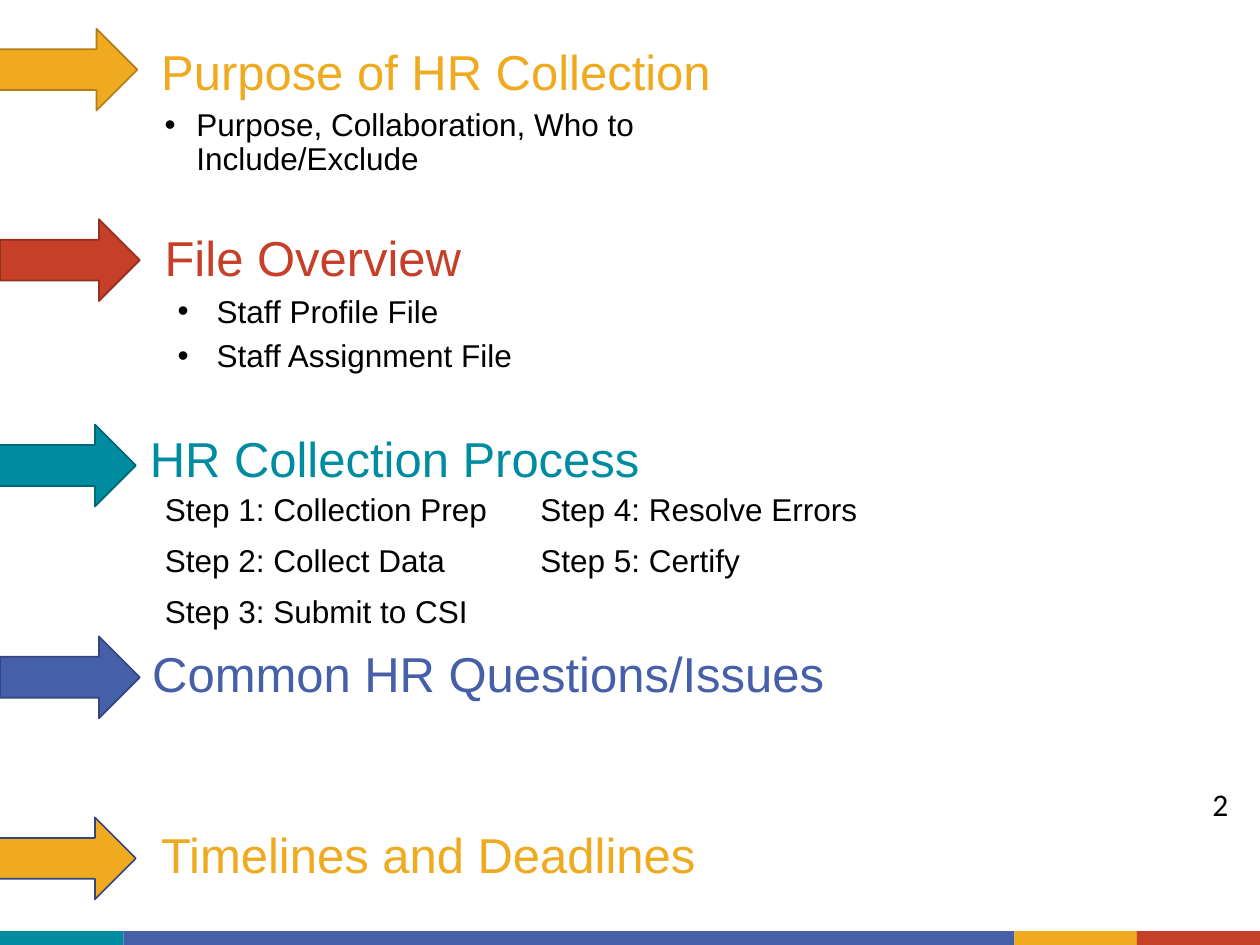
from pptx import Presentation
from pptx.dml.color import RGBColor
from pptx.enum.shapes import MSO_SHAPE as Shape
from pptx.oxml.ns import qn
from pptx.util import Cm, Pt
from lxml.etree import SubElement

GOLD = RGBColor(0xEF, 0xAA, 0x1F)
RED = RGBColor(0xC6, 0x3F, 0x28)
TEAL = RGBColor(0x00, 0x8C, 0xA0)
BLUE = RGBColor(0x45, 0x5F, 0xA9)
DARK_GOLD = RGBColor(0xB1, 0x7E, 0x17)
DARK_RED = RGBColor(0x92, 0x2F, 0x1E)
DARK_TEAL = RGBColor(0x00, 0x68, 0x76)
DARK_BLUE = RGBColor(0x33, 0x46, 0x7D)
BLACK = RGBColor(0, 0, 0)


def write(frame, text, size=18, color=BLACK, font="Arial", spacing=None,
          before=0, after=0, bullet=None, level=0):
    """Fill a text frame, one paragraph a line; bullet is (margin, hang) in cm."""
    for i, line in enumerate(text.split("\n")):
        para = frame.paragraphs[0] if i == 0 else frame.add_paragraph()
        para.level = level
        if bullet:
            margin, hang = bullet
            props = para._p.get_or_add_pPr()
            props.set("marL", str(Cm(margin)))
            props.set("indent", str(-Cm(hang)))
            SubElement(props, qn("a:buFont")).set("typeface", "Arial")
            SubElement(props, qn("a:buChar")).set("char", "•")
        if spacing:
            para.line_spacing = spacing
        para.space_before = Pt(before if i else 0)
        para.space_after = Pt(after)
        run = para.add_run()
        run.text = line
        run.font.size = Pt(size)
        run.font.name = font
        run.font.color.rgb = color


class Page:
    def __init__(self, slide):
        self.slide = slide

    def shape(self, kind, x, y, w, h, fill, line=None):
        item = self.slide.shapes.add_shape(kind, Cm(x), Cm(y), Cm(w), Cm(h))
        item.shadow.inherit = False
        item.fill.solid()
        item.fill.fore_color.rgb = fill
        if line is None:
            item.line.fill.background()
        else:
            item.line.color.rgb = line
            item.line.width = Pt(1)

    def arrow(self, x, y, fill, line):
        self.shape(Shape.RIGHT_ARROW, x, y, 2.82, 1.65, fill, line)

    def text(self, x, y, w, h, text, inset=None, **style):
        box = self.slide.shapes.add_textbox(Cm(x), Cm(y), Cm(w), Cm(h))
        frame = box.text_frame
        frame.word_wrap = True
        if inset is not None:
            frame.margin_left = frame.margin_right = Cm(inset)
            frame.margin_top = frame.margin_bottom = Cm(inset)
        write(frame, text, **style)

    def title(self, x, y, w, h, text, color):
        self.text(x, y, w, h, text, size=28, color=color, spacing=0.9)

    def table(self, x, y, widths, height, rows):
        grid = self.slide.shapes.add_table(
            len(rows), len(widths), Cm(x), Cm(y),
            Cm(sum(widths)), Cm(height * len(rows))).table
        grid.first_row = grid.horz_banding = False
        for col, width in zip(grid.columns, widths):
            col.width = Cm(width)
        for r, row in enumerate(rows):
            for c, text in enumerate(row):
                cell = grid.cell(r, c)
                cell.fill.background()
                write(cell.text_frame, text)


def main():
    deck = Presentation()
    deck.slide_width, deck.slide_height = Cm(25.4), Cm(19.05)
    page = Page(deck.slides.add_slide(deck.slide_layouts[6]))

    left = 0
    for width, color in [(2.49, TEAL), (17.96, BLUE), (2.47, GOLD), (2.48, RED)]:
        page.shape(Shape.RECTANGLE, left, 18.77, width, 0.28, color)
        left += width

    for x, y, fill, line in [
        (-0.05, 0.58, GOLD, DARK_GOLD),
        (0, 4.42, RED, DARK_RED),
        (-0.08, 8.56, TEAL, DARK_TEAL),
        (0, 12.83, BLUE, DARK_BLUE),
        (-0.08, 16.48, GOLD, DARK_BLUE),
    ]:
        page.arrow(x, y, fill, line)

    page.title(3, 0.84, 16.97, 1.8, "Purpose of HR Collection", GOLD)
    page.text(3.07, 2.08, 14.2, 1.57,
              "Purpose, Collaboration, Who to Include/Exclude",
              spacing=0.9, bullet=(0.64, 0.64))

    page.title(3.07, 4.6, 16.97, 1.8, "File Overview", RED)
    page.text(2.77, 5.84, 10.24, 2.77,
              "Staff Profile File\nStaff Assignment File", spacing=0.9,
              before=2, after=4, bullet=(1.35, 0.79), level=1)

    page.title(2.77, 8.64, 15.93, 1.35, "HR Collection Process", TEAL)
    page.table(3.07, 9.8, [7.57, 7.06], 1.03, [
        ("Step 1: Collection Prep", "Step 4: Resolve Errors"),
        ("Step 2: Collect Data", "Step 5: Certify"),
        ("Step 3: Submit to CSI", ""),
    ])

    page.title(2.82, 12.98, 14.22, 1.35, "Common HR Questions/Issues", BLUE)
    page.title(3, 16.64, 15.93, 1.35, "Timelines and Deadlines", GOLD)
    page.text(24.26, 15.65, 1.14, 0.86, "2", inset=0.18, font="Calibri")

    deck.save("out.pptx")


if __name__ == "__main__":
    main()
